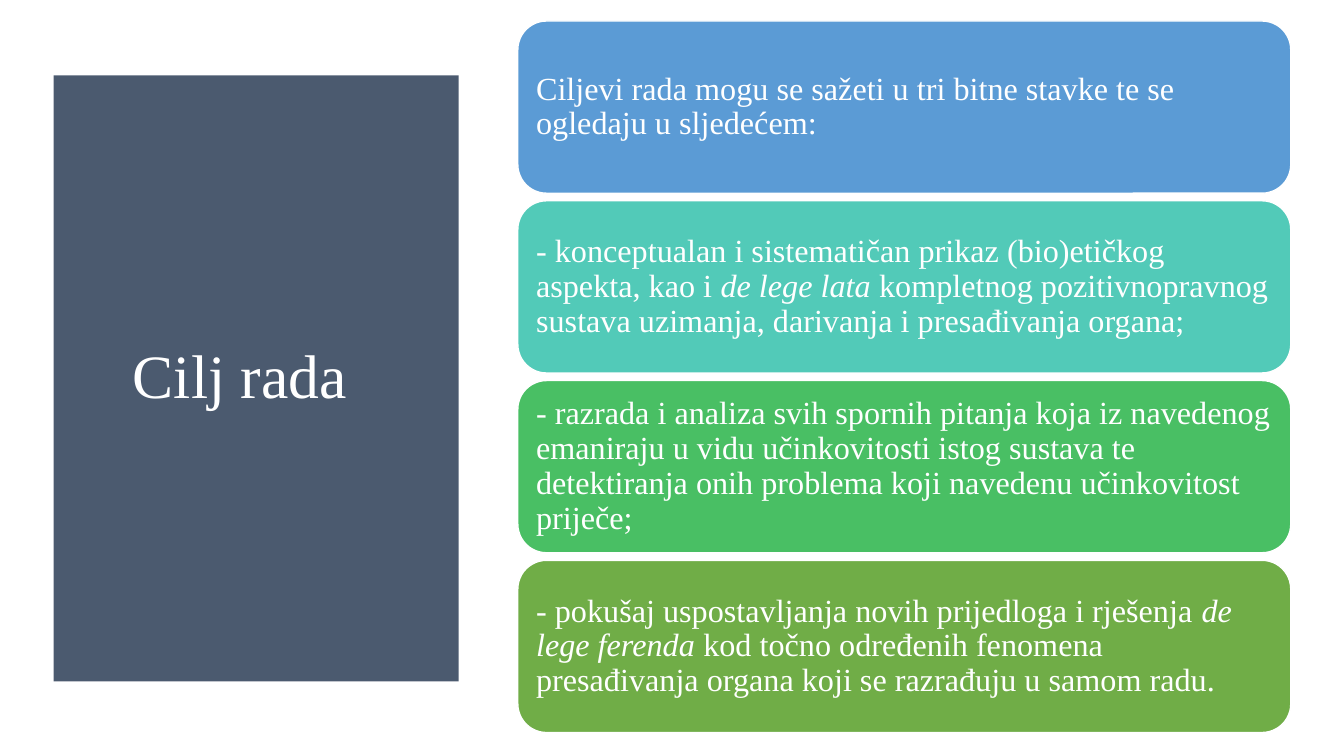
from lxml import etree
from pptx import Presentation
from pptx.dml.color import RGBColor
from pptx.enum.shapes import MSO_SHAPE
from pptx.enum.text import MSO_ANCHOR, MSO_AUTO_SIZE, PP_ALIGN
from pptx.oxml.ns import qn
from pptx.util import Cm, Pt

ROUNDED = MSO_SHAPE.ROUNDED_RECTANGLE
MIDDLE = MSO_ANCHOR.MIDDLE
LEFT = PP_ALIGN.LEFT
NO_AUTOFIT = MSO_AUTO_SIZE.NONE
TITLE_ONLY_LAYOUT = 5
FONT = "Times New Roman"

COLORS = {
    "white": "FFFFFF",
    "slate": "44546A",
    "blue": "5B9BD5",
    "teal": "52CAB8",
    "green": "49BF64",
    "olive": "70AD47",
}

GOALS = [
    ("blue", [("Ciljevi rada mogu se sažeti u tri bitne stavke te se ogledaju u sljedećem:", False)]),
    ("teal", [
        ("- konceptualan i sistematičan prikaz (bio)etičkog aspekta, kao i ", False),
        ("de lege lata ", True),
        ("kompletnog pozitivnopravnog sustava uzimanja, darivanja i presađivanja organa;", False),
    ]),
    ("green", [
        ("- razrada i analiza svih spornih pitanja koja iz navedenog emaniraju u vidu "
         "učinkovitosti istog sustava te detektiranja onih problema koji navedenu "
         "učinkovitost priječe;", False),
    ]),
    ("olive", [
        ("- pokušaj uspostavljanja novih prijedloga i rješenja ", False),
        ("de lege ferenda ", True),
        ("kod točno određenih fenomena presađivanja organa koji se razrađuju u samom radu.", False),
    ]),
]


def rgb(name):
    return RGBColor.from_string(COLORS[name])


def write_text(shape, pieces, *, size, color="white", left_inset=0.25, inset=0.25):
    frame = shape.text_frame
    frame.word_wrap = True
    frame.auto_size = NO_AUTOFIT
    frame.vertical_anchor = MIDDLE
    frame.margin_left = Cm(left_inset)
    frame.margin_right = frame.margin_top = frame.margin_bottom = Cm(inset)
    paragraph = frame.paragraphs[0]
    paragraph.alignment = LEFT
    paragraph.line_spacing = 0.9
    for text, italic in pieces:
        run = paragraph.add_run()
        run.text = text
        run.font.name = FONT
        run.font.size = Pt(size)
        run.font.italic = italic
        run.font.color.rgb = rgb(color)


def fill_shape(shape, color, opacity=100):
    shape.fill.solid()
    shape.fill.fore_color.rgb = rgb(color)
    if opacity < 100:
        color_element = shape.fill._xPr.find(".//" + qn("a:srgbClr"))
        etree.SubElement(color_element, qn("a:alpha"), val=str(opacity * 1000))


def add_title_panel(slide, left, top, width, height):
    title = slide.shapes.title
    title.left, title.top = Cm(left), Cm(top)
    title.width, title.height = Cm(width), Cm(height)
    fill_shape(title, "slate", opacity=96)
    write_text(title, [("Cilj rada", False)], size=44, left_inset=2)


def add_goal_cards(slide, left, top, width, height, gap=0.19):
    card_height = (height - gap * (len(GOALS) - 1)) / len(GOALS)
    for index, (color, pieces) in enumerate(GOALS):
        card_top = top + index * (card_height + gap)
        card = slide.shapes.add_shape(
            ROUNDED, Cm(left), Cm(card_top), Cm(width), Cm(card_height))
        card.shadow.inherit = False
        fill_shape(card, color)
        card.line.color.rgb = rgb("white")
        card.line.width = Pt(1)
        write_text(card, pieces, size=23)


def main():
    presentation = Presentation()
    presentation.slide_width = Cm(33.87)
    presentation.slide_height = Cm(19.05)
    slide = presentation.slides.add_slide(presentation.slide_layouts[TITLE_ONLY_LAYOUT])
    add_title_panel(slide, 1.35, 1.9, 10.21, 15.27)
    add_goal_cards(slide, 13.05, 0.53, 19.48, 17.93)
    presentation.save("out.pptx")


if __name__ == "__main__":
    main()
